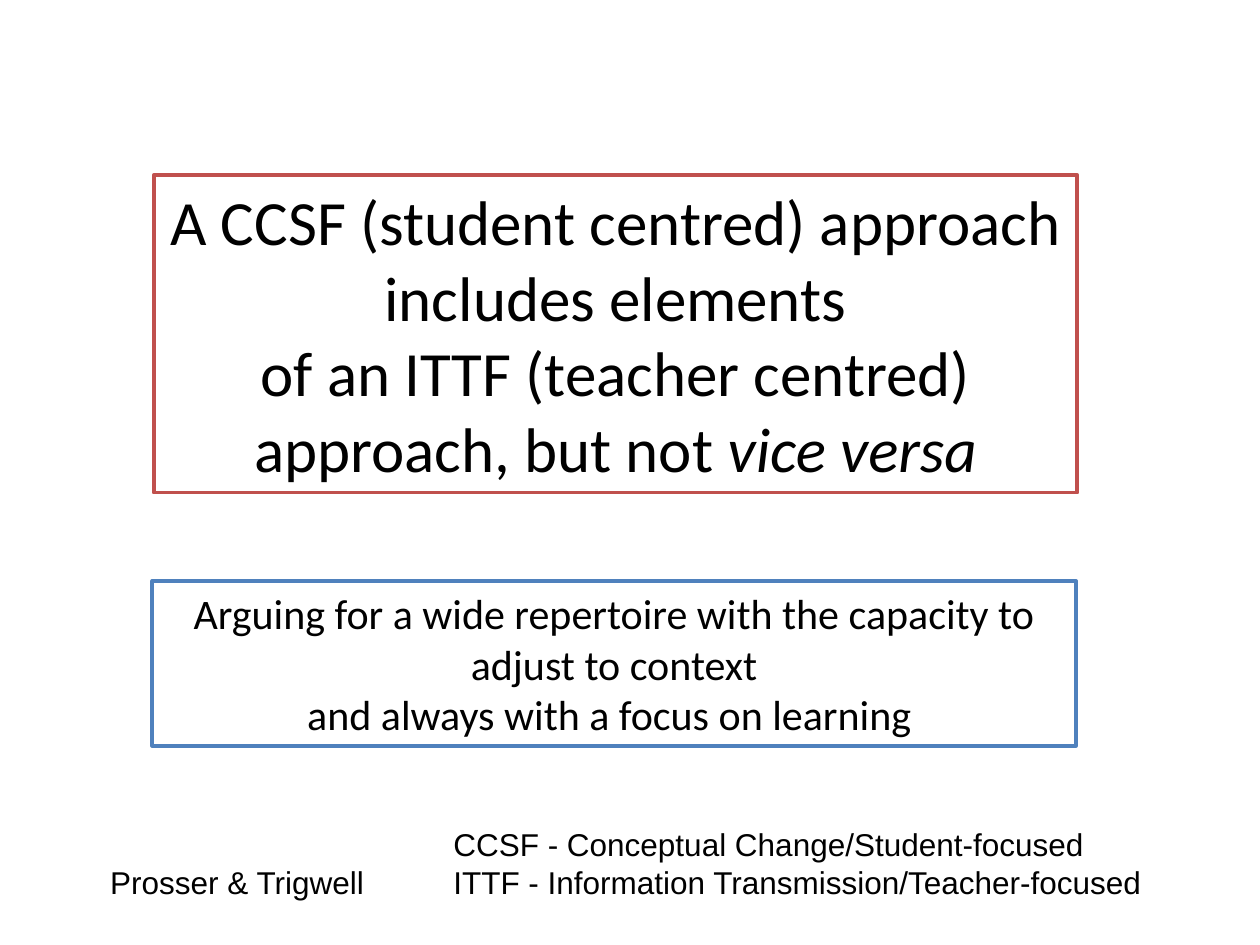
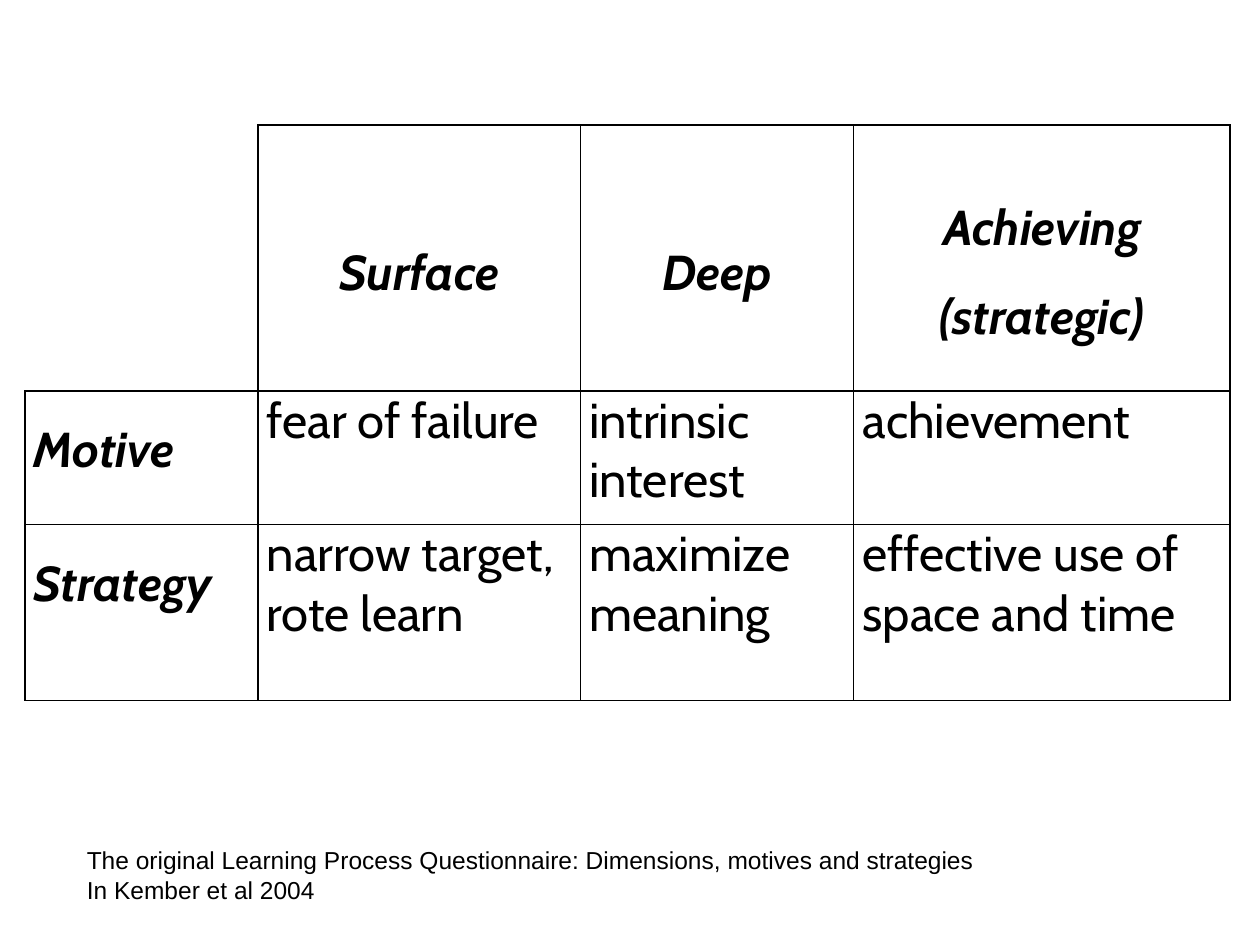
from pptx import Presentation
from pptx.dml.color import RGBColor
from pptx.enum.shapes import MSO_SHAPE
from pptx.enum.text import MSO_ANCHOR, MSO_AUTO_SIZE, PP_ALIGN
from pptx.oxml import parse_xml
from pptx.oxml.ns import nsdecls
from pptx.util import Cm, Pt

BLACK, WHITE, RED, BLUE = "000000", "FFFFFF", "C0504D", "4F81BD"
LEFT, MID, RIGHT = PP_ALIGN.LEFT, PP_ALIGN.CENTER, PP_ALIGN.RIGHT


def tint(code):
    return RGBColor.from_string(code)


def style(para, face, size, align=LEFT, bold=False):
    """Format a paragraph; bold headings are also italic."""
    para.alignment = align
    font = para.font
    font.name, font.size = face, Pt(size)
    font.bold = font.italic = bold
    font.color.rgb = tint(BLACK)


def write(frame, lines, face, size, align=LEFT, bold=False):
    """Fill a frame with one paragraph per line."""
    frame.text = "\n".join(lines)
    for para in frame.paragraphs:
        style(para, face, size, align, bold)


def fit(frame, wrap=False):
    frame.word_wrap = wrap
    frame.auto_size = MSO_AUTO_SIZE.SHAPE_TO_FIT_TEXT


def note(slide, box, lines, size, align=LEFT):
    frame = slide.shapes.add_textbox(*map(Cm, box)).text_frame
    write(frame, lines, "Arial", size, align)
    fit(frame)


def panel(slide, box, edge, width, lines, size, wrap=False):
    """Add an outlined statement and return its text frame."""
    shape = slide.shapes.add_shape(MSO_SHAPE.RECTANGLE, *map(Cm, box))
    shape.shadow.inherit = False
    shape.fill.solid()
    shape.fill.fore_color.rgb = tint(WHITE)
    shape.line.color.rgb = tint(edge)
    shape.line.width = Pt(width)
    frame = shape.text_frame
    write(frame, lines, "Calibri", size, MID)
    fit(frame, wrap)
    return frame


def border(cell, sides):
    """Draw the named sides in black and hide the others."""
    props = cell._tc.get_or_add_tcPr()
    for side in "LRTB":
        paint = (f'<a:solidFill><a:srgbClr val="{BLACK}"/></a:solidFill>'
                 if side in sides else "<a:noFill/>")
        props.append(parse_xml(
            f'<a:ln{side} {nsdecls("a")} w="{Pt(1)}">{paint}</a:ln{side}>'))


def grid(slide, box, widths, heights, rows):
    """Add a table with heading cells along its top and left edges."""
    table = slide.shapes.add_table(
        len(rows), len(widths), *map(Cm, box)).table
    table.first_row = table.horz_banding = False
    for col, width in zip(table.columns, widths):
        col.width = Cm(width)
    for row, height in zip(table.rows, heights):
        row.height = Cm(height)
    for r, row in enumerate(rows):
        for c, lines in enumerate(row):
            cell = table.cell(r, c)
            border(cell, "LRTB" if r or c else "RB")
            cell.fill.background()
            cell.margin_left = cell.margin_right = Cm(0.18)
            cell.margin_top = cell.margin_bottom = 0
            head = r == 0 or c == 0
            write(cell.text_frame, lines, "Cabin", 28,
                  LEFT if r else MID, head)
            if head:
                cell.text_frame.paragraphs[0].line_spacing = 1.5
            if r == 0:
                cell.vertical_anchor = MSO_ANCHOR.MIDDLE


def claim(slide):
    frame = panel(slide, (3.1, 3.53, 18.62, 6.4), RED, 2.25, [
        "A CCSF (student centred) approach\vincludes elements\v"
        " of an ITTF (teacher centred) \vapproach, but not "], 36)
    run = frame.paragraphs[0].add_run()
    run.text = "vice versa"
    run.font.italic = True
    note(slide, (1.93, 17.27, 5.66, 1.02), ["Prosser & Trigwell"], 18, RIGHT)
    note(slide, (8.89, 16.51, 14.5, 1.8), [
        "CCSF - Conceptual Change/Student-focused",
        "ITTF - Information Transmission/Teacher-focused"], 18)
    panel(slide, (3.07, 11.71, 18.62, 3.33), BLUE, 2, [
        "Arguing for a wide repertoire with the capacity to adjust to context",
        "and always with a focus on learning "], 24, True)


def matrix(slide):
    grid(slide, (0.5, 2.52, 24.3, 11.6),
         (4.7, 6.5, 5.51, 7.59), (5.36, 2.69, 3.55), [
        [[], ["Surface"], ["Deep"], ["Achieving (strategic)"]],
        [["Motive"], ["fear of failure"], ["intrinsic interest"],
         ["achievement"]],
        [["Strategy"], ["narrow target,", "rote learn"],
         ["maximize meaning"], ["effective use of space and time"]]])
    note(slide, (1.5, 16.92, 18.47, 1.45), [
        "The original Learning Process Questionnaire: "
        "Dimensions, motives and strategies",
        "In Kember et al 2004"], 14)


def main():
    deck = Presentation()
    deck.slide_width, deck.slide_height = Cm(25.4), Cm(19.05)
    blank = deck.slide_layouts[6]
    for build in (claim, matrix):
        build(deck.slides.add_slide(blank))
    deck.save("out.pptx")


if __name__ == "__main__":
    main()
